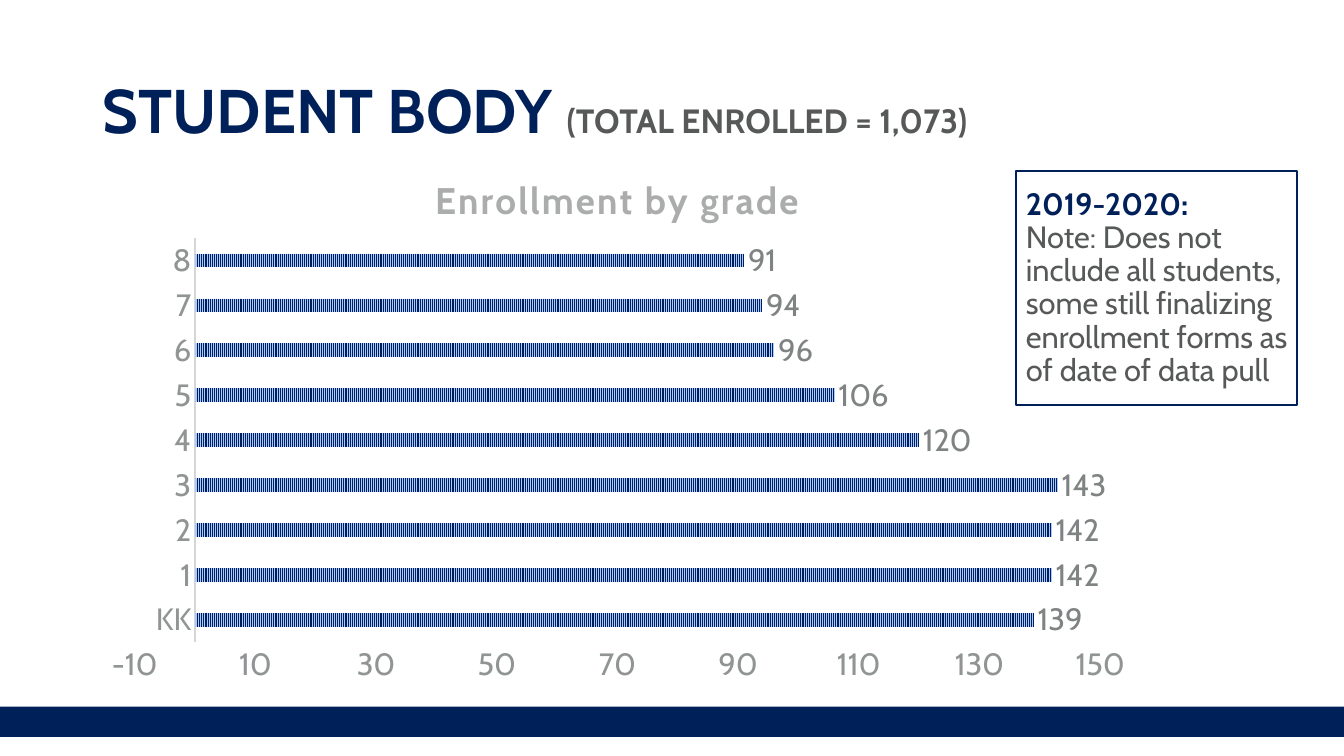
"""Build the student body slide with its enrollment bar chart."""
from dataclasses import dataclass

from lxml import etree
from pptx import Presentation
from pptx.chart.chart import Chart
from pptx.chart.data import CategoryChartData
from pptx.dml.color import RGBColor
from pptx.enum.chart import XL_CHART_TYPE, XL_LABEL_POSITION, XL_TICK_LABEL_POSITION, XL_TICK_MARK
from pptx.enum.dml import MSO_PATTERN
from pptx.enum.shapes import MSO_SHAPE
from pptx.enum.text import MSO_ANCHOR, PP_ALIGN
from pptx.oxml import parse_xml
from pptx.oxml.ns import nsdecls, qn
from pptx.util import Pt

BAR_CLUSTERED = XL_CHART_TYPE.BAR_CLUSTERED
OUTSIDE_END = XL_LABEL_POSITION.OUTSIDE_END
NEXT_TO_AXIS = XL_TICK_LABEL_POSITION.NEXT_TO_AXIS
NO_TICK = XL_TICK_MARK.NONE
NARROW_VERTICAL = MSO_PATTERN.NARROW_VERTICAL
RECTANGLE = MSO_SHAPE.RECTANGLE
MIDDLE = MSO_ANCHOR.MIDDLE
LEFT = PP_ALIGN.LEFT


@dataclass(frozen=True)
class Theme:
    """Colours, font and type sizes of the slide."""
    font: str = "Cabin"
    navy: str = "00205A"
    pale_blue: str = "ABC9FF"
    white: str = "FFFFFF"
    body: str = "575959"
    axis_text: str = "919494"
    value_text: str = "808383"
    chart_title: str = "ABACAC"
    axis_line: str = "D5D6D6"
    title_size: float = 44
    subtitle_size: float = 24
    chart_title_size: float = 26.4
    text_size: float = 22
    line_width: float = 1.5


@dataclass(frozen=True)
class Box:
    """Position and size in points."""
    left: float
    top: float
    width: float
    height: float

    def lengths(self) -> tuple:
        """Return the four values as lengths."""
        return Pt(self.left), Pt(self.top), Pt(self.width), Pt(self.height)


@dataclass(frozen=True)
class Panel:
    """A filled rectangle with an optional outline."""
    box: Box
    fill: str
    outline: str | None = None


@dataclass(frozen=True)
class Phrase:
    """A piece of text with its format."""
    text: str
    size: float
    color: str
    bold: bool = False


THEME = Theme()
FOOTER_BAND = Panel(Box(0, 504.72, 960, 21.6), THEME.navy)
NOTE_PANEL = Panel(Box(725.76, 122.4, 200.88, 167.04), THEME.white, THEME.navy)
HEADING_BOX = Box(66.24, 28.8, 828, 104.4)
CHART_BOX = Box(66.24, 112.32, 749.52, 385.2)
HEADING = (
    Phrase("STUDENT BODY ", THEME.title_size, THEME.navy, True),
    Phrase("(TOTAL ENROLLED = 1,073)", THEME.subtitle_size, THEME.body, True),
)
NOTE = (
    Phrase("2019-2020:", THEME.text_size, THEME.navy, True),
    Phrase("Note: Does not include all students, some still finalizing enrollment "
           "forms as of date of data pull", THEME.text_size, THEME.body),
)
ENROLLMENT = {"KK": 139, "1": 142, "2": 142, "3": 143, "4": 120,
              "5": 106, "6": 96, "7": 94, "8": 91}


def set_font(font, *, size: float, color: str, bold: bool = False) -> None:
    """Apply the theme font with a size, colour and weight."""
    font.name = THEME.font
    font.size = Pt(size)
    font.bold = bold
    font.color.rgb = RGBColor.from_string(color)


def add_text(paragraph, text: str, *, size: float, color: str, bold: bool = False):
    """Append a formatted run to a left-aligned paragraph."""
    paragraph.alignment = LEFT
    paragraph.line_spacing = 0.9
    run = paragraph.add_run()
    run.text = text
    set_font(run.font, size=size, color=color, bold=bold)
    return run


def add_phrase(paragraph, phrase: Phrase) -> None:
    """Append a phrase to a paragraph."""
    add_text(paragraph, phrase.text, size=phrase.size, color=phrase.color, bold=phrase.bold)


def add_panel(slide, panel: Panel):
    """Draw a rectangle and return it."""
    shape = slide.shapes.add_shape(RECTANGLE, *panel.box.lengths())
    shape.shadow.inherit = False
    shape.fill.solid()
    shape.fill.fore_color.rgb = RGBColor.from_string(panel.fill)
    if panel.outline:
        shape.line.color.rgb = RGBColor.from_string(panel.outline)
        shape.line.width = Pt(THEME.line_width)
    else:
        shape.line.fill.background()
    return shape


def add_heading(slide) -> None:
    """Write the slide heading on one line."""
    frame = slide.shapes.add_textbox(*HEADING_BOX.lengths()).text_frame
    frame.word_wrap = True
    frame.vertical_anchor = MIDDLE
    for phrase in HEADING:
        add_phrase(frame.paragraphs[0], phrase)


def add_note(slide) -> None:
    """Draw the note panel with one paragraph per phrase."""
    frame = add_panel(slide, NOTE_PANEL).text_frame
    frame.word_wrap = True
    frame.vertical_anchor = MIDDLE
    frame.margin_right = Pt(3)
    for index, phrase in enumerate(NOTE):
        add_phrase(frame.add_paragraph() if index else frame.paragraphs[0], phrase)


def manual_layout(**values: float):
    """Return a chart layout element placed by fractions of the chart."""
    layout = parse_xml(f"<c:layout {nsdecls('c')}><c:manualLayout/></c:layout>")
    for name, value in {"xMode": "edge", "yMode": "edge", **values}.items():
        etree.SubElement(layout[0], qn(f"c:{name}")).set("val", str(value))
    return layout


def style_title(chart: Chart) -> None:
    """Write the letter-spaced chart title above the plot."""
    chart.has_title = True
    title = chart.chart_title
    run = add_text(title.text_frame.paragraphs[0], "Enrollment by grade",
                   size=THEME.chart_title_size, color=THEME.chart_title, bold=True)
    run.font._rPr.set("spc", "160")
    title.include_in_layout = False
    element = title._element
    for layout in element.findall(qn("c:layout")):
        element.remove(layout)
    element.find(qn("c:tx")).addnext(manual_layout(x=0.32, y=0.02))


def style_axes(chart: Chart) -> None:
    """Format both axes and set the value scale."""
    for axis in (chart.category_axis, chart.value_axis):
        axis.has_major_gridlines = False
        axis.major_tick_mark = axis.minor_tick_mark = NO_TICK
        axis.tick_label_position = NEXT_TO_AXIS
        set_font(axis.tick_labels.font, size=THEME.text_size, color=THEME.axis_text)
    grade_line = chart.category_axis.format.line
    grade_line.color.rgb = RGBColor.from_string(THEME.axis_line)
    grade_line.width = Pt(THEME.line_width)
    students = chart.value_axis
    students.format.line.fill.background()
    students.minimum_scale, students.maximum_scale, students.major_unit = -10, 150, 20


def add_enrollment_chart(slide) -> None:
    """Draw the patterned bars of enrollment by grade."""
    enrollment = CategoryChartData()
    enrollment.categories = list(ENROLLMENT)
    enrollment.add_series("Series 1", list(ENROLLMENT.values()))
    chart = slide.shapes.add_chart(BAR_CLUSTERED, *CHART_BOX.lengths(), enrollment).chart
    set_font(chart.font, size=THEME.text_size, color=THEME.body)
    chart.has_legend = False
    style_title(chart)
    style_axes(chart)
    plot = chart.plots[0]
    plot.gap_width, plot.overlap, plot.vary_by_categories = 227, -48, False
    bars = plot.series[0].format.fill
    bars.patterned()
    bars.pattern = NARROW_VERTICAL
    bars.fore_color.rgb = RGBColor.from_string(THEME.navy)
    bars.back_color.rgb = RGBColor.from_string(THEME.pale_blue)
    labels = plot.series[0].data_labels
    labels.show_value = True
    labels.position = OUTSIDE_END
    set_font(labels.font, size=THEME.text_size, color=THEME.value_text)
    area = chart._chartSpace.chart.plotArea
    for layout in area.findall(qn("c:layout")):
        area.remove(layout)
    area.insert(0, manual_layout(x=0.04, y=0.15, w=0.92, h=0.75))
    target = etree.Element(qn("c:layoutTarget"))
    target.set("val", "inner")
    area[0][0].insert(0, target)


def main() -> None:
    """Build and save the presentation."""
    deck = Presentation()
    deck.slide_width, deck.slide_height = Pt(960), Pt(540)
    slide = deck.slides.add_slide(deck.slide_layouts[6])
    add_panel(slide, FOOTER_BAND)
    add_heading(slide)
    add_enrollment_chart(slide)
    add_note(slide)
    deck.save("out.pptx")


if __name__ == "__main__":
    main()
